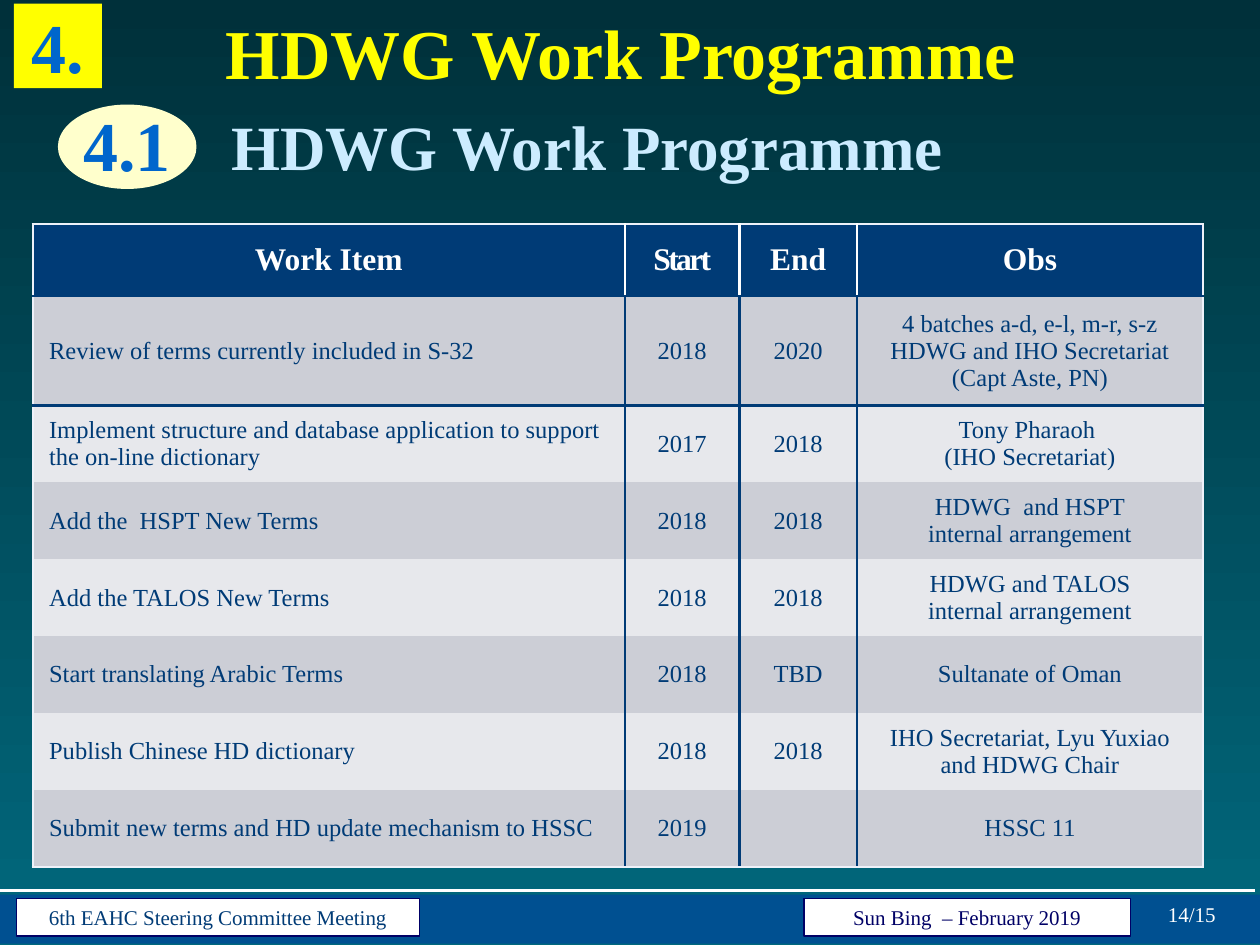
from dataclasses import dataclass

from lxml import etree
from pptx import Presentation
from pptx.dml.color import RGBColor
from pptx.enum.shapes import MSO_CONNECTOR, MSO_SHAPE
from pptx.enum.text import MSO_ANCHOR, PP_ALIGN
from pptx.oxml.ns import qn
from pptx.util import Inches, Pt

RECTANGLE, OVAL = MSO_SHAPE.RECTANGLE, MSO_SHAPE.OVAL
STRAIGHT = MSO_CONNECTOR.STRAIGHT
TOP, MIDDLE = MSO_ANCHOR.TOP, MSO_ANCHOR.MIDDLE
LEFT, CENTER = PP_ALIGN.LEFT, PP_ALIGN.CENTER

FONT = "Times New Roman"
NAVY, INK, PALE, WHITE = "003B76", "000066", "EEF1F9", "FFFFFF"
YELLOW, CREAM, BLUE, SKY = "FFFF00", "FFFFCC", "0066CC", "CCECFF"
BANDS = ("CCCED6", "E7E8EC")


@dataclass
class Label:
    text: str
    left: float
    top: float
    width: float
    height: float
    size: int
    color: str
    bold: bool = True
    anchor: MSO_ANCHOR = MIDDLE
    inset: float = 0
    fill: str | None = None
    line: str | None = None
    shape: MSO_SHAPE | None = None


LABELS = [
    Label("", 0, 7.1, 10, 0.39, 12, WHITE, fill="005091", shape=RECTANGLE),
    Label("14/15", 9.03, 7.11, 0.86, 0.3, 12, WHITE, False, TOP, 0.05),
    Label("6th EAHC Steering Committee Meeting", 0.13, 7.13, 3.2, 0.3, 12, NAVY,
          False, TOP, 0.05, WHITE, INK, RECTANGLE),
    Label("Sun Bing  – February 2019", 6.38, 7.13, 2.59, 0.3, 12, INK,
          False, TOP, 0.05, WHITE, INK, RECTANGLE),
    Label("HDWG Work Programme", 0.4, 0.6, 8.52, 1.11, 36, SKY),
    Label("", 0.46, 0.83, 1.1, 0.67, 40, BLUE, fill=CREAM, shape=OVAL),
    Label("4.1", 0.59, 0.81, 0.84, 0.67, 40, BLUE, anchor=TOP),
    Label("HDWG Work Programme", 0.67, 0.18, 8.51, 0.46, 40, YELLOW),
    Label("4.", 0.11, 0.03, 0.7, 0.67, 40, BLUE, anchor=TOP, fill=YELLOW, shape=RECTANGLE),
]

COLUMN_WIDTHS = (4.7, 0.91, 0.93, 2.75)
ROW_HEIGHTS = (0.57, 0.87) + (0.61,) * 6
WORK_ITEMS = [
    ("Work Item", "Start", "End", "Obs"),
    ("Review of terms currently included in S-32", "2018", "2020",
     "4 batches a-d, e-l, m-r, s-z\nHDWG and IHO Secretariat\n(Capt Aste, PN)"),
    ("Implement structure and database application to support the on-line dictionary",
     "2017", "2018", "Tony Pharaoh \n(IHO Secretariat)"),
    ("Add the  HSPT New Terms", "2018", "2018", "HDWG  and HSPT\ninternal arrangement"),
    ("Add the TALOS New Terms", "2018", "2018", "HDWG and TALOS\ninternal arrangement"),
    ("Start translating Arabic Terms", "2018", "TBD", "Sultanate of Oman"),
    ("Publish Chinese HD dictionary", "2018", "2018",
     "IHO Secretariat, Lyu Yuxiao\nand HDWG Chair"),
    ("Submit new terms and HD update mechanism to HSSC", "2019", "", "HSSC 11"),
]


def rgb(color: str) -> RGBColor:
    return RGBColor.from_string(color)


def style_text(frame, size: int, color: str, bold: bool, alignment: PP_ALIGN) -> None:
    for paragraph in frame.paragraphs:
        paragraph.alignment = alignment
        font = paragraph.font
        font.name, font.size, font.bold = FONT, Pt(size), bold
        font.color.rgb = rgb(color)


def add_label(slide, label: Label) -> None:
    box = [Inches(v) for v in (label.left, label.top, label.width, label.height)]
    if label.shape is None:
        shape = slide.shapes.add_textbox(*box)
    else:
        shape = slide.shapes.add_shape(label.shape, *box)
        shape.shadow.inherit = False
        shape.fill.solid()
        shape.fill.fore_color.rgb = rgb(label.fill)
        if label.line:
            shape.line.color.rgb = rgb(label.line)
            shape.line.width = Pt(0.75)
        else:
            shape.line.fill.background()
    if not label.text:
        return
    frame = shape.text_frame
    frame.word_wrap = True
    frame.vertical_anchor = label.anchor
    frame.margin_left = frame.margin_right = Inches(2 * label.inset)
    frame.margin_top = frame.margin_bottom = Inches(label.inset)
    frame.text = label.text
    style_text(frame, label.size, label.color, label.bold, CENTER)


def border_colors(row: int, column: int) -> dict[str, str | None]:
    """Colours of a cell's sides, in schema order; None leaves a side bare."""
    last_row, last_column = len(ROW_HEIGHTS) - 1, len(COLUMN_WIDTHS) - 1
    inner = WHITE if row == 0 else NAVY
    return {
        "a:lnL": PALE if column == 0 else inner,
        "a:lnR": PALE if column == last_column else inner,
        "a:lnT": PALE if row == 0 else NAVY if row <= 2 else None,
        "a:lnB": PALE if row == last_row else NAVY if row <= 1 else None,
    }


def set_borders(cell, colors: dict[str, str | None]) -> None:
    properties = cell._tc.get_or_add_tcPr()
    for index, (tag, color) in enumerate(colors.items()):
        line = etree.Element(qn(tag), w=str(Pt(1.5)))
        if color:
            fill = etree.SubElement(line, qn("a:solidFill"))
            etree.SubElement(fill, qn("a:srgbClr"), val=color)
        else:
            etree.SubElement(line, qn("a:noFill"))
        properties.insert(index, line)


def add_work_table(slide) -> None:
    table = slide.shapes.add_table(
        len(ROW_HEIGHTS), len(COLUMN_WIDTHS), Inches(0.26), Inches(1.78),
        Inches(sum(COLUMN_WIDTHS)), Inches(sum(ROW_HEIGHTS))).table
    for column, width in zip(table.columns, COLUMN_WIDTHS):
        column.width = Inches(width)
    for row, height in zip(table.rows, ROW_HEIGHTS):
        row.height = Inches(height)
    for r, texts in enumerate(WORK_ITEMS):
        header = r == 0
        for c, text in enumerate(texts):
            cell = table.cell(r, c)
            cell.text = text
            cell.vertical_anchor = MIDDLE
            cell.margin_left = cell.margin_right = Inches(0.13)
            cell.margin_top = cell.margin_bottom = Inches(0.05)
            cell.fill.solid()
            cell.fill.fore_color.rgb = rgb(NAVY if header else BANDS[(r - 1) % 2])
            style_text(cell.text_frame, 18 if header else 14, WHITE if header else NAVY,
                       header, CENTER if header or c else LEFT)
            set_borders(cell, border_colors(r, c))
    start_run = table.cell(0, 1).text_frame.paragraphs[0].runs[0]
    start_run._r.get_or_add_rPr().set("spc", "-150")


def add_footer_rule(slide) -> None:
    rule = slide.shapes.add_connector(
        STRAIGHT, 0, Inches(7.07), Inches(9.96), Inches(7.07))
    rule.line.color.rgb = rgb(WHITE)
    rule.line.width = Pt(1.5)
    etree.SubElement(rule._element.spPr, qn("a:effectLst"))


def set_background(slide) -> None:
    fill = slide.background.fill
    fill.gradient()
    fill.gradient_angle = 270
    for stop, position, color in zip(fill.gradient_stops, (0, 1), ("00303A", "01687D")):
        stop.position = position
        stop.color.rgb = rgb(color)


def main() -> None:
    presentation = Presentation()
    presentation.slide_width, presentation.slide_height = Inches(10), Inches(7.5)
    slide = presentation.slides.add_slide(presentation.slide_layouts[6])
    set_background(slide)
    add_footer_rule(slide)
    for label in LABELS[:4]:
        add_label(slide, label)
    add_work_table(slide)
    for label in LABELS[4:]:
        add_label(slide, label)
    presentation.save("out.pptx")


if __name__ == "__main__":
    main()
